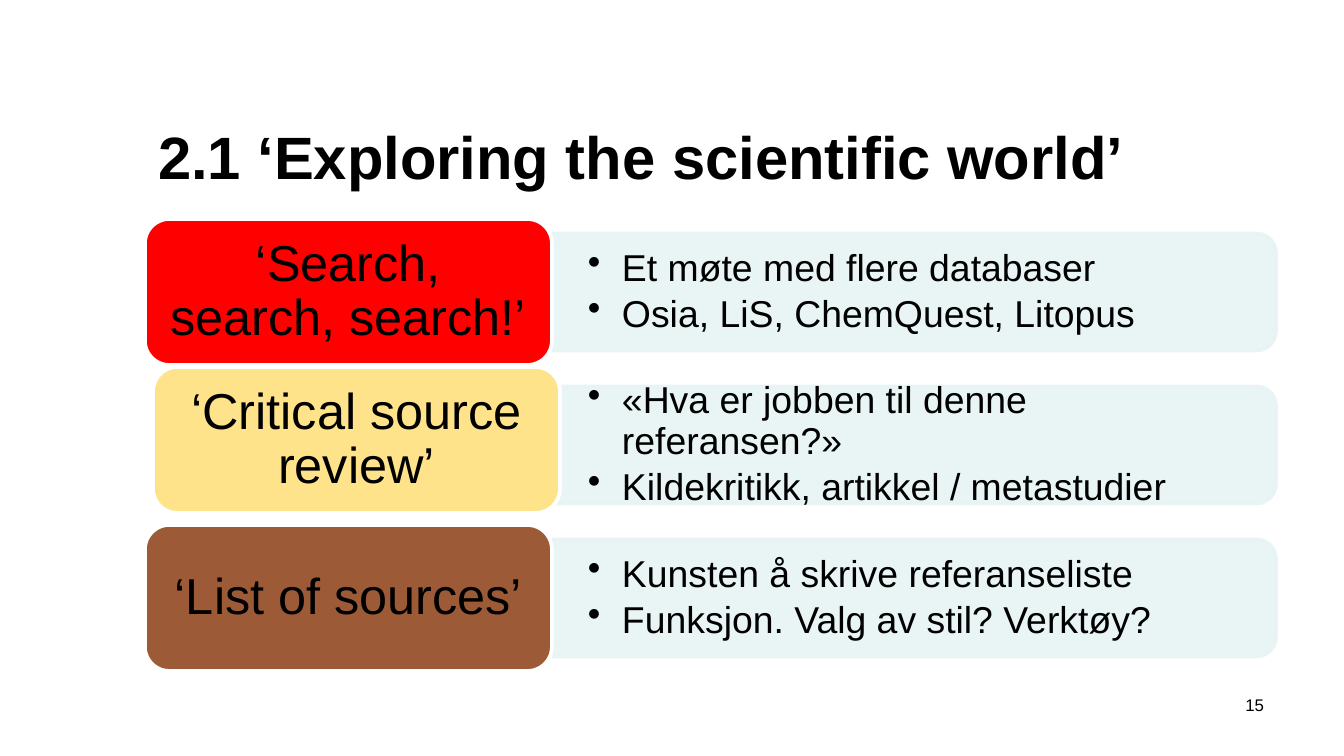
from lxml.etree import SubElement
from pptx import Presentation
from pptx.dml.color import RGBColor
from pptx.enum.shapes import MSO_SHAPE as SHAPE
from pptx.enum.text import MSO_ANCHOR as ANCHOR, PP_ALIGN as ALIGN
from pptx.oxml.ns import qn
from pptx.util import Pt

EMU_PER_PX = 914400 / 134.4
COLORS = {"text": "000000", "white": "FFFFFF", "bar": "E7F3F4",
          "search": "FF0000", "review": "FFE38B", "sources": "9C5A36"}

ROW_TOP, ROW_PITCH = 219, 153
LABEL_LEFT, LABEL_W, LABEL_H = 145, 407, 146
BAR_LEFT, BAR_W, BAR_H = 552, 724, 117
BAR_TEXT_W, BAR_TEXT_H = 718, 106
BULLET_INDENT = 34

# label, colour, label shift (x, y), bullet points
ROWS = [
    ("‘Search, search, search!’", "search", (0, 0),
     ["Et møte med flere databaser", "Osia, LiS, ChemQuest, Litopus"]),
    ("‘Critical source review’", "review", (8, -5),
     ["«Hva er jobben til denne referansen?»",
      "Kildekritikk, artikkel / metastudier"]),
    ("‘List of sources’", "sources", (0, 0),
     ["Kunsten å skrive referanseliste", "Funksjon. Valg av stil? Verktøy?"]),
]


def px(n):
    return round(n * EMU_PER_PX)


def rgb(name):
    return RGBColor.from_string(COLORS[name])


def add_bullet(p):
    pPr = p._p.get_or_add_pPr()
    pPr.set("marL", str(px(BULLET_INDENT)))
    pPr.set("indent", str(-px(BULLET_INDENT)))
    SubElement(pPr, qn("a:buChar")).set("char", "•")


def write(s, lines, size, bold=False, align=ALIGN.LEFT, anchor=ANCHOR.MIDDLE,
          inset=(13, 7), spacing=1.0, after=0, bullets=False):
    tf = s.text_frame
    dx, dy = map(px, inset)
    frame = {"word_wrap": True, "vertical_anchor": anchor,
             "margin_left": dx, "margin_right": dx,
             "margin_top": dy, "margin_bottom": dy}
    for name, value in frame.items():
        setattr(tf, name, value)
    for i, line in enumerate(lines):
        p = tf.paragraphs[0] if i == 0 else tf.add_paragraph()
        p.alignment, p.line_spacing, p.space_after = align, spacing, Pt(after)
        if bullets:
            add_bullet(p)
        r = p.add_run()
        r.text = line
        for name, value in {"name": "Arial", "size": Pt(size), "bold": bold}.items():
            setattr(r.font, name, value)
        r.font.color.rgb = rgb("text")


def add_text(slide, box, lines, size, **fmt):
    s = slide.shapes.add_textbox(*map(px, box))
    write(s, lines, size, **fmt)


def add_block(slide, kind, box, fill, line):
    s = slide.shapes.add_shape(kind, *map(px, box))
    s.shadow.inherit = False
    s.fill.solid()
    s.fill.fore_color.rgb = rgb(fill)
    s.line.color.rgb = rgb(line)
    s.line.width = Pt(2)
    return s


def add_bar(slide, mid_y, points):
    """Bar with its rounded end to the right, and the bullets over it."""
    mid_x = BAR_LEFT + BAR_W / 2
    box = (mid_x - BAR_H / 2, mid_y - BAR_W / 2, BAR_H, BAR_W)
    s = add_block(slide, SHAPE.ROUND_2_SAME_RECTANGLE, box, "bar", "bar")
    s.rotation = 90
    for color in s._element.spPr.iter(qn("a:srgbClr")):
        SubElement(color, qn("a:alpha")).set("val", "90000")
    add_text(slide, (BAR_LEFT, mid_y - BAR_TEXT_H / 2, BAR_TEXT_W, BAR_TEXT_H),
             points, 20, inset=(36, 19), spacing=0.9, after=3, bullets=True)


def add_label(slide, left, top, text, color):
    s = add_block(slide, SHAPE.ROUNDED_RECTANGLE,
                  (left, top, LABEL_W, LABEL_H), color, "white")
    write(s, [text], 27, align=ALIGN.CENTER, inset=(15, 8), spacing=0.9)


def main():
    prs = Presentation()
    prs.slide_width, prs.slide_height = px(1344), px(756)
    slide = prs.slides.add_slide(prs.slide_layouts[6])

    add_text(slide, (145, 93, 1132, 126),
             ["2.1 ‘Exploring the scientific world’"], 32, bold=True)
    add_text(slide, (1176, 688, 101, 51), ["15"], 9,
             align=ALIGN.RIGHT, anchor=ANCHOR.TOP)
    for i, (label, color, (dx, dy), points) in enumerate(ROWS):
        top = ROW_TOP + i * ROW_PITCH
        add_bar(slide, top + LABEL_H / 2, points)
        add_label(slide, LABEL_LEFT + dx, top + dy, label, color)

    prs.save("out.pptx")


if __name__ == "__main__":
    main()
